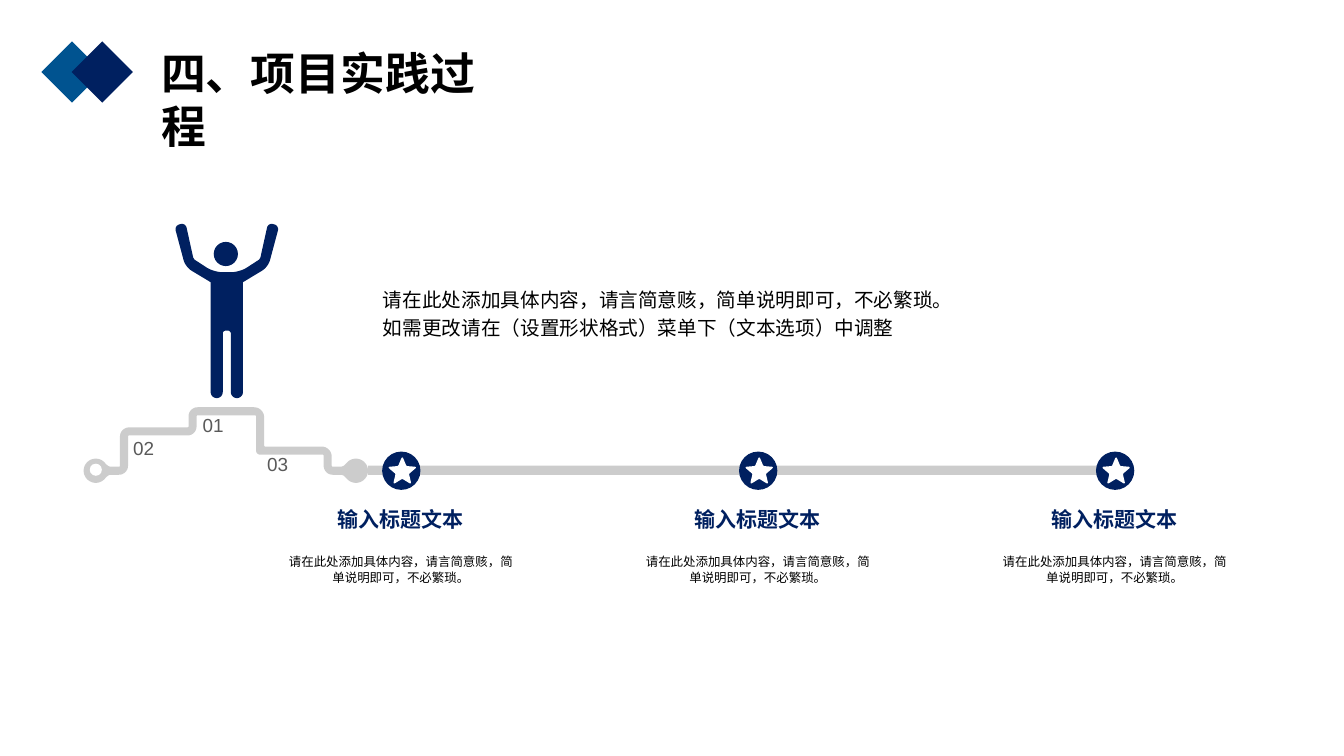
from dataclasses import dataclass
from math import cos, radians, sin

from lxml.etree import SubElement
from pptx import Presentation
from pptx.dml.color import RGBColor
from pptx.enum.shapes import MSO_SHAPE as Shape
from pptx.enum.text import MSO_ANCHOR as Anchor, PP_ALIGN as Align
from pptx.oxml.ns import qn
from pptx.util import Inches, Pt


@dataclass(frozen=True)
class Theme:
    font: str = "Arial"
    navy: str = "002060"
    blue: str = "005390"
    gray: str = "808080"
    label: str = "595959"
    black: str = "000000"
    white: str = "FFFFFF"
    title_size: float = 32
    heading_size: float = 15
    body_size: float = 14
    number_size: float = 13.5
    caption_size: float = 8.9
    track_alpha: int = 40


def polar(center_x, center_y, radius, degrees):
    angle = radians(degrees)
    return center_x + radius * cos(angle), center_y + radius * sin(angle)


def arc(center_x, center_y, radius, start, end, step=6):
    """Corners without rounding along a circular arc."""
    return [(*polar(center_x, center_y, radius, degrees), 0)
            for degrees in range(start, end + 1, step)]


def toward(origin, target, length):
    delta_x, delta_y = target[0] - origin[0], target[1] - origin[1]
    ratio = length / (delta_x ** 2 + delta_y ** 2) ** 0.5
    return origin[0] + delta_x * ratio, origin[1] + delta_y * ratio


def round_corners(corners, steps=8):
    """Turn (x, y, radius) corners into the points of a smooth outline."""
    points = []
    for index, (x, y, radius) in enumerate(corners):
        if not radius:
            points.append((x, y))
            continue
        start = toward((x, y), corners[index - 1], radius)
        end = toward((x, y), corners[(index + 1) % len(corners)], radius)
        controls = [toward(side, (x, y), radius * 0.55) for side in (start, end)]
        curve = (start, *controls, end)
        for step in range(steps + 1):
            t = step / steps
            weights = ((1 - t) ** 3, 3 * t * (1 - t) ** 2,
                       3 * t ** 2 * (1 - t), t ** 3)
            points.append(tuple(
                sum(weight * point[axis] for weight, point in zip(weights, curve))
                for axis in (0, 1)))
    return points


class SlideBuilder:
    def __init__(self, slide, theme):
        self.slide = slide
        self.theme = theme

    def paint(self, shape, color, alpha=None):
        shape.shadow.inherit = False
        shape.fill.solid()
        shape.fill.fore_color.rgb = RGBColor.from_string(color)
        shape.line.fill.background()
        if alpha is not None:
            color_node = next(shape._element.spPr.iter(qn("a:srgbClr")))
            SubElement(color_node, qn("a:alpha"), val=str(alpha * 1000))

    def preset(self, kind, left, top, width, height, color, alpha=None, rotation=0):
        shape = self.slide.shapes.add_shape(
            kind, Inches(left), Inches(top), Inches(width), Inches(height))
        shape.rotation = rotation
        self.paint(shape, color, alpha)

    def circle(self, center_x, center_y, radius, color):
        self.preset(Shape.OVAL, center_x - radius, center_y - radius,
                    2 * radius, 2 * radius, color)

    def outline(self, corners, color, alpha=None):
        points = [(Inches(x), Inches(y)) for x, y in round_corners(corners)]
        builder = self.slide.shapes.build_freeform(*points[0])
        builder.add_line_segments(points[1:], close=True)
        self.paint(builder.convert_to_shape(), color, alpha)

    def star(self, center_x, center_y):
        corners = []
        for index in range(10):
            radius, rounding = ((0.155, 0.025), (0.07, 0.01))[index % 2]
            point = polar(center_x, center_y, radius, index * 36 - 90)
            corners.append((*point, rounding))
        self.outline(corners, self.theme.white)

    def text(self, text, left, top, width, height, *, size, color, bold=False,
             align=Align.LEFT, anchor=Anchor.TOP, spacing=None, wrap=True,
             margins=True):
        box = self.slide.shapes.add_textbox(
            Inches(left), Inches(top), Inches(width), Inches(height))
        frame = box.text_frame
        frame.word_wrap = wrap
        frame.vertical_anchor = anchor
        if not margins:
            frame.margin_left = frame.margin_right = 0
            frame.margin_top = frame.margin_bottom = 0
        paragraph = frame.paragraphs[0]
        paragraph.text = text
        paragraph.alignment = align
        paragraph.line_spacing = spacing
        for run in paragraph.runs:
            run.font.name = self.theme.font
            run.font.size = Pt(size)
            run.font.bold = bold
            run.font.color.rgb = RGBColor.from_string(color)


def main():
    presentation = Presentation()
    presentation.slide_width = Inches(13.33)
    presentation.slide_height = Inches(7.5)
    theme = Theme()
    page = SlideBuilder(
        presentation.slides.add_slide(presentation.slide_layouts[6]), theme)

    # Title with two diamonds
    for left, color in ((0.5, theme.blue), (0.8, theme.navy)):
        page.preset(Shape.RECTANGLE, left, 0.5, 0.43, 0.43, color, rotation=45)
    page.text("四、项目实践过程", 1.5, 0.4, 3.7, 0.64,
              size=theme.title_size, color=theme.black, bold=True)

    # Podium track, from the left ring over the steps to the right ball
    upper_edge = [
        (1.08, 4.63, 0.02), (1.19, 4.63, 0.01), (1.19, 4.24, 0.09),
        (1.87, 4.24, 0.01), (1.87, 4.04, 0.09), (2.62, 4.04, 0.1),
        (2.62, 4.43, 0.01), (3.29, 4.43, 0.1), (3.29, 4.63, 0.01),
        (3.4, 4.63, 0.02)]
    lower_edge = [
        (3.4, 4.71, 0.02), (3.21, 4.71, 0.09), (3.21, 4.51, 0.01),
        (2.54, 4.51, 0.04), (2.54, 4.12, 0.01), (1.95, 4.12, 0.01),
        (1.95, 4.32, 0.09), (1.27, 4.32, 0.01), (1.27, 4.71, 0.09),
        (1.08, 4.71, 0.02)]
    page.outline(upper_edge + arc(3.53, 4.67, 0.12, 216, 504)
                 + lower_edge + arc(0.95, 4.67, 0.12, 36, 324),
                 theme.gray, theme.track_alpha)
    page.circle(0.95, 4.66, 0.06, theme.white)
    for number, left, top in (("01", 2.01, 4.1), ("02", 1.32, 4.33),
                              ("03", 2.65, 4.49)):
        page.text(number, left, top, 0.82, 0.63, size=theme.number_size,
                  color=theme.label, wrap=False, margins=False)

    # Winner: the left half of the body is mirrored about its axis
    axis = 2.25
    left_half = [
        (2.21, 3.28, 0.03), (2.21, 3.95, 0.06), (2.09, 3.95, 0.06),
        (2.09, 2.8, 0), (1.84, 2.65, 0.07), (1.73, 2.24, 0.05),
        (1.84, 2.21, 0.05), (1.92, 2.57, 0.02), (2.12, 2.7, 0.08)]
    right_half = [(2 * axis - x, y, radius) for x, y, radius in reversed(left_half)]
    page.outline(left_half + right_half, theme.navy)
    page.circle(axis - 0.01, 2.52, 0.12, theme.navy)

    # Timeline with three milestones
    page.preset(Shape.RECTANGLE, 3.65, 4.62, 7.55, 0.09, theme.gray,
                theme.track_alpha)
    for index in range(3):
        center = 3.98 + 3.54 * index
        page.circle(center, 4.67, 0.19, theme.navy)
        page.star(center + 0.01, 4.68)
        page.text("输入标题文本", center - 1.25, 4.98, 2.49, 0.45,
                  size=theme.heading_size, color=theme.navy, bold=True,
                  align=Align.CENTER)
        page.text("请在此处添加具体内容，请言简意赅，简单说明即可，不必繁琐。",
                  center - 1.25, 5.43, 2.49, 0.6, size=theme.caption_size,
                  color=theme.black, align=Align.CENTER, spacing=1.1)

    # Main description
    page.text("请在此处添加具体内容，请言简意赅，简单说明即可，不必繁琐。\v"
              "如需更改请在（设置形状格式）菜单下（文本选项）中调整",
              3.7, 2.62, 8.01, 0.94, size=theme.body_size, color=theme.black,
              anchor=Anchor.MIDDLE, spacing=1.2)

    presentation.save("out.pptx")


if __name__ == "__main__":
    main()
